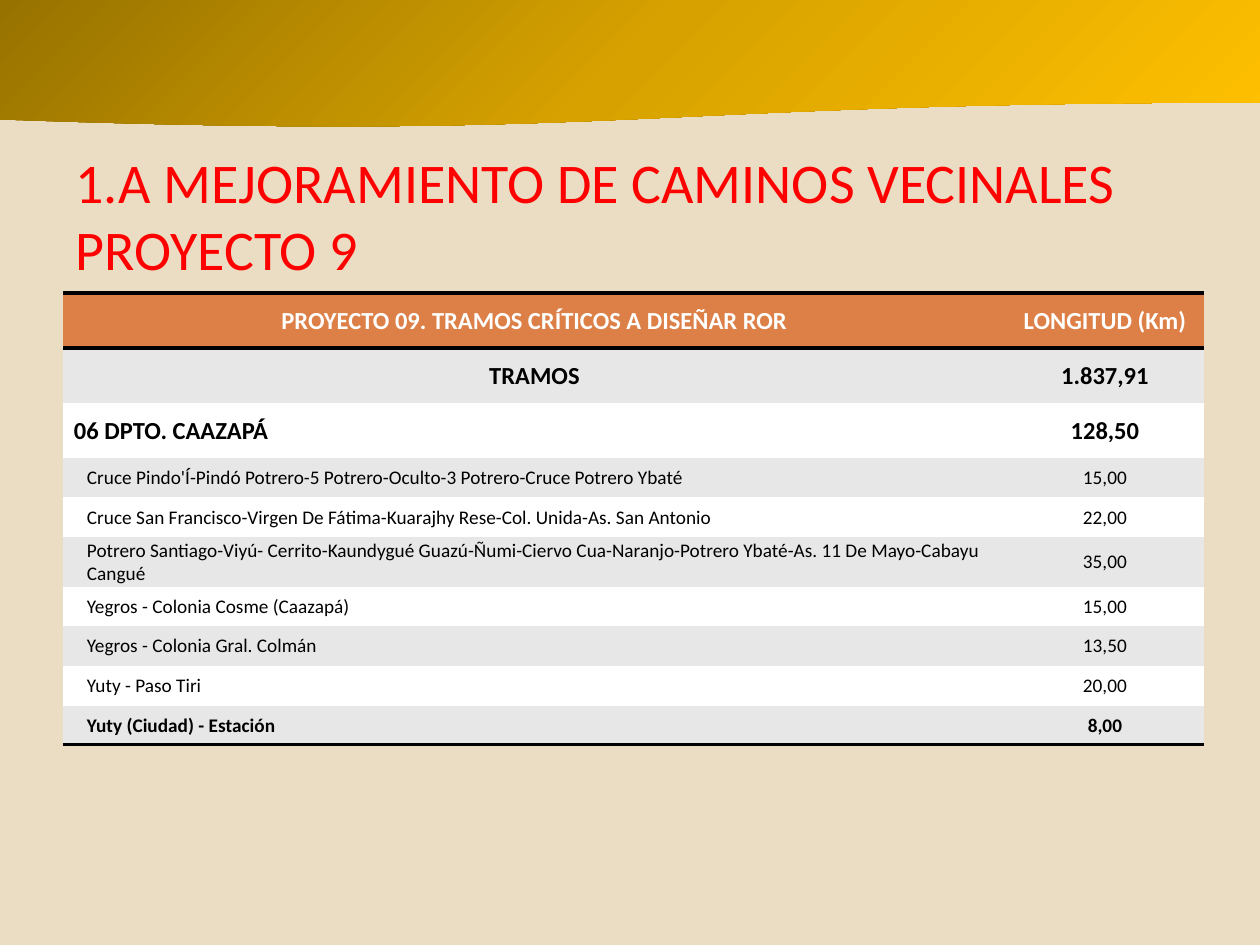
import copy

import pptx
import pptx.dml.color
import pptx.enum.shapes
import pptx.enum.text
import pptx.oxml
import pptx.oxml.ns
import pptx.util

RGBColor = pptx.dml.color.RGBColor
SAND = RGBColor(0xEB, 0xDD, 0xC3)
RED = RGBColor(0xFF, 0x00, 0x00)
ORANGE = RGBColor(0xDD, 0x80, 0x47)
GRAY = RGBColor(0xE7, 0xE7, 0xE7)
WHITE = RGBColor(0xFF, 0xFF, 0xFF)
BLACK = RGBColor(0x00, 0x00, 0x00)
BANNER_STOPS = (
    (0, RGBColor(0x97, 0x72, 0x00)),
    (0.5, RGBColor(0xD7, 0xA2, 0x00)),
    (1, RGBColor(0xFF, 0xC0, 0x00)),
)

FONT = "Calibri"
PIXELS_PER_INCH = 126
NO_STYLE_NO_GRID = "{2D5ABB26-0587-4C30-8999-92F81FD0307C}"
COLUMN_WIDTHS = (943, 198)
HEADING_HEIGHT = 55
HEADINGS = (
    ("PROYECTO 09. TRAMOS CRÍTICOS A DISEÑAR ROR", "LONGITUD (Km)"),
    ("TRAMOS", "1.837,91"),
    ("06 DPTO. CAAZAPÁ", "128,50"),
)
SECTIONS = (
    ("Cruce Pindo'Í-Pindó Potrero-5 Potrero-Oculto-3 Potrero-Cruce Potrero Ybaté", "15,00", 39),
    ("Cruce San Francisco-Virgen De Fátima-Kuarajhy Rese-Col. Unida-As. San Antonio", "22,00", 40),
    ("Potrero Santiago-Viyú- Cerrito-Kaundygué Guazú-Ñumi-Ciervo Cua-Naranjo-"
     "Potrero Ybaté-As. 11 De Mayo-Cabayu Cangué", "35,00", 50),
    ("Yegros - Colonia Cosme (Caazapá)", "15,00", 39),
    ("Yegros - Colonia Gral. Colmán", "13,50", 40),
    ("Yuty - Paso Tiri", "20,00", 40),
    ("Yuty (Ciudad) - Estación", "8,00", 39),
)


def px(length):
    return pptx.util.Emu(round(length * 914400 / PIXELS_PER_INCH))


def format_font(font, size, color, bold=False):
    font.name = FONT
    font.size = pptx.util.Pt(size)
    font.bold = bold
    font.color.rgb = color


def add_banner(slide):
    banner = slide.shapes.add_shape(
        pptx.enum.shapes.MSO_SHAPE.FLOWCHART_DOCUMENT, 0, 0, px(1260), px(128))
    banner.shadow.inherit = False
    banner.line.fill.background()
    banner.fill.gradient()
    banner.fill.gradient_angle = 315
    stop_list = banner._element.spPr.find(".//" + pptx.oxml.ns.qn("a:gsLst"))
    stop_list.append(copy.deepcopy(stop_list[0]))
    for stop, (position, color) in zip(banner.fill.gradient_stops, BANNER_STOPS):
        stop.position = position
        stop.color.rgb = color


def format_title(slide):
    title = slide.shapes.title
    title.left, title.top, title.width, title.height = px(63), px(136), px(1134), px(158)
    text_frame = title.text_frame
    text_frame.text = "1.A MEJORAMIENTO DE CAMINOS VECINALES \vPROYECTO 9"
    text_frame.word_wrap = True
    text_frame.auto_size = pptx.enum.text.MSO_AUTO_SIZE.NONE
    text_frame.vertical_anchor = pptx.enum.text.MSO_ANCHOR.MIDDLE
    paragraph = text_frame.paragraphs[0]
    paragraph.alignment = pptx.enum.text.PP_ALIGN.LEFT
    for run in paragraph.runs:
        format_font(run.font, 32, RED)


def add_border(cell, side):
    border = pptx.oxml.parse_xml(
        f'<a:{side} {pptx.oxml.ns.nsdecls("a")} w="{pptx.util.Pt(2)}">'
        f'<a:solidFill><a:srgbClr val="{BLACK}"/></a:solidFill></a:{side}>')
    cell._tc.get_or_add_tcPr().insert(0, border)


def fill_cell(cell, text, fill, size, color, bold, indent):
    cell.fill.solid()
    cell.fill.fore_color.rgb = fill
    cell.vertical_anchor = pptx.enum.text.MSO_ANCHOR.MIDDLE
    cell.margin_left = px(indent or 1)
    cell.margin_right = cell.margin_top = px(1)
    cell.margin_bottom = 0
    cell.text_frame.text = text
    paragraph = cell.text_frame.paragraphs[0]
    alignments = pptx.enum.text.PP_ALIGN
    paragraph.alignment = alignments.LEFT if indent else alignments.CENTER
    format_font(paragraph.runs[0].font, size, color, bold)


def add_lengths_table(slide):
    rows = [(*heading, HEADING_HEIGHT) for heading in HEADINGS] + list(SECTIONS)
    last = len(rows) - 1
    frame = slide.shapes.add_table(
        len(rows), len(COLUMN_WIDTHS), px(63), px(293),
        px(sum(COLUMN_WIDTHS)), px(sum(row[2] for row in rows)))
    table = frame.table
    table.first_row = table.horz_banding = False
    table._tbl.tblPr.find(pptx.oxml.ns.qn("a:tableStyleId")).text = NO_STYLE_NO_GRID
    for column, width in zip(table.columns, COLUMN_WIDTHS):
        column.width = px(width)
    for index, (name, length, height) in enumerate(rows):
        table.rows[index].height = px(height)
        is_heading = index < len(HEADINGS)
        fill = ORANGE if index == 0 else GRAY if index % 2 else WHITE
        color = WHITE if index == 0 else BLACK
        size = 14 if is_heading else 11
        bold = is_heading or index == last
        name_indent = 24 if not is_heading else 11 if index == 2 else 0
        for cell, text, indent in zip(table.rows[index].cells, (name, length), (name_indent, 0)):
            fill_cell(cell, text, fill, size, color, bold, indent)
            if index in (0, last):
                add_border(cell, "lnB")
            if index == 0:
                add_border(cell, "lnT")


def main():
    presentation = pptx.Presentation()
    presentation.slide_width = px(1260)
    presentation.slide_height = px(945)
    slide = presentation.slides.add_slide(presentation.slide_layouts[5])
    slide.background.fill.solid()
    slide.background.fill.fore_color.rgb = SAND
    add_banner(slide)
    format_title(slide)
    add_lengths_table(slide)
    presentation.save("out.pptx")


if __name__ == "__main__":
    main()
